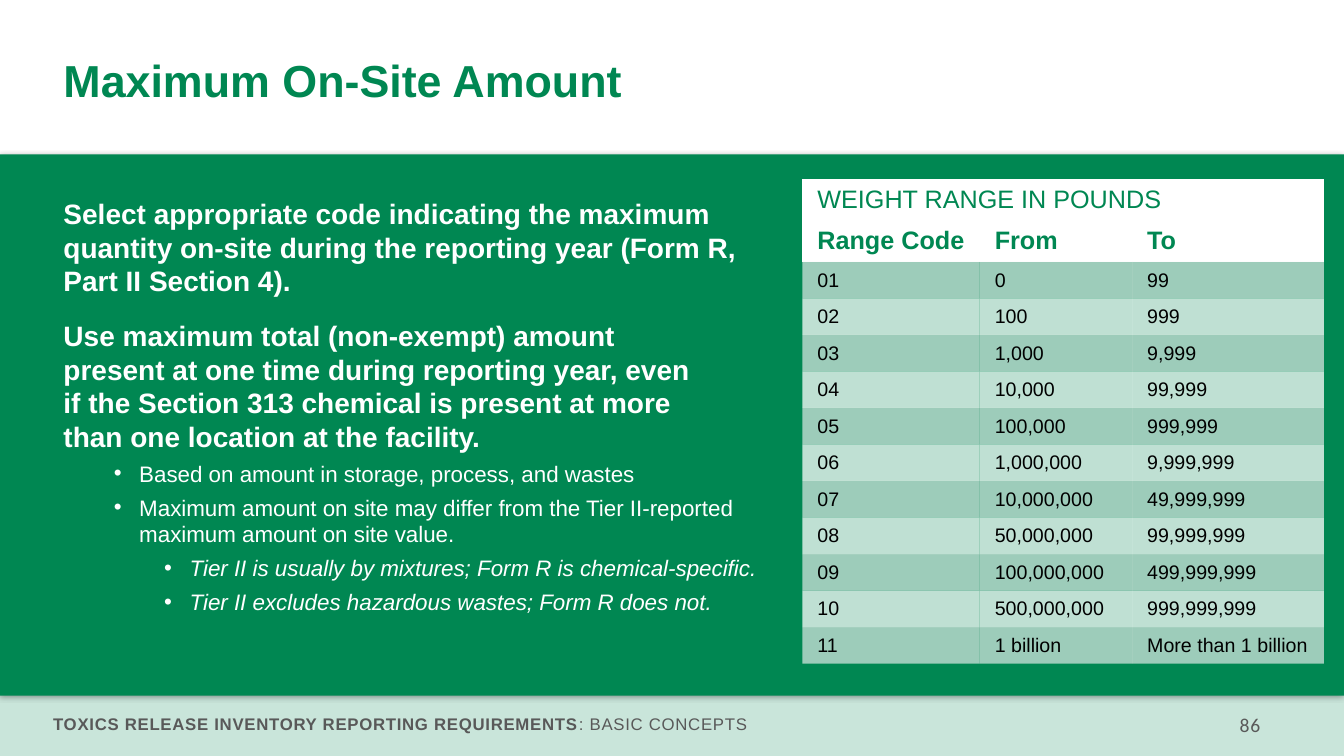
import pptx
import pptx.util
import pptx.dml.color
import pptx.enum.shapes
import pptx.enum.text
import pptx.oxml
import pptx.oxml.ns

Cm, Pt = pptx.util.Cm, pptx.util.Pt
ALIGN = pptx.enum.text.PP_ALIGN
ANCHOR = pptx.enum.text.MSO_ANCHOR
NS = pptx.oxml.ns.nsdecls("a")
COLORS = {"green": "008752", "white": "FFFFFF", "pale": "F2F2F2",
          "gray": "595959", "black": "000000"}
NO_STYLE = "{2D5ABB26-0587-4C30-8999-92F81FD0307C}"


class Deck:
    """Slide style and the current slide."""

    font = "Arial"

    def __init__(self):
        self.prs = pptx.Presentation()
        self.prs.slide_width, self.prs.slide_height = Cm(33.87), Cm(19.05)
        self.slide = self.prs.slides.add_slide(self.prs.slide_layouts[6])

    def paint(self, fill, color, alpha=100):
        fill.solid()
        fill.fore_color.rgb = pptx.dml.color.RGBColor.from_string(COLORS[color])
        if alpha < 100:
            tint = fill._xPr.find(".//" + pptx.oxml.ns.qn("a:srgbClr"))
            tint.append(pptx.oxml.parse_xml(f'<a:alpha {NS} val="{alpha * 1000}"/>'))

    def band(self, top, height, color, alpha=100, shadow=False):
        shape = self.slide.shapes.add_shape(
            pptx.enum.shapes.MSO_SHAPE.RECTANGLE, 0, Cm(top),
            self.prs.slide_width, Cm(height))
        shape.shadow.inherit = False
        shape.line.fill.background()
        self.paint(shape.fill, color, alpha)
        if shadow:
            effect = shape._element.spPr.find(pptx.oxml.ns.qn("a:effectLst"))
            effect.append(pptx.oxml.parse_xml(
                f'<a:outerShdw {NS} blurRad="{Pt(4)}" dist="{Pt(1)}" dir="5400000" '
                'rotWithShape="0"><a:srgbClr val="000000">'
                '<a:alpha val="34000"/></a:srgbClr></a:outerShdw>'))

    def box(self, left, top, width, height, anchor=ANCHOR.TOP):
        frame = self.slide.shapes.add_textbox(
            Cm(left), Cm(top), Cm(width), Cm(height)).text_frame
        frame.word_wrap = True
        frame.vertical_anchor = anchor
        return frame

    def run(self, para, text, size, color, bold=False, italic=False,
            font=None, gap=0):
        run = para.add_run()
        run.text = text
        face = run.font
        face.name, face.size = font or self.font, Pt(size)
        face.bold, face.italic = bold, italic
        self.paint(face.fill, color)
        if gap:
            run._r.get_or_add_rPr().set("spc", str(int(gap * 100)))

    def bullet(self, para, level):
        para.level = level
        props = para._p.get_or_add_pPr()
        props.set("marL", str(Cm(0.64 + 1.27 * level)))
        props.set("indent", str(Cm(-0.64)))
        props.append(pptx.oxml.parse_xml(f'<a:buFont {NS} typeface="Arial"/>'))
        props.append(pptx.oxml.parse_xml(f'<a:buChar {NS} char="•"/>'))

    def cell(self, cell, text, size, color, fill, alpha, bold):
        cell.margin_left = cell.margin_right = Cm(0.38)
        cell.margin_top = cell.margin_bottom = Cm(0.1)
        cell.vertical_anchor = ANCHOR.MIDDLE
        self.paint(cell.fill, fill, alpha)
        if text:
            self.run(cell.text_frame.paragraphs[0], text, size, color, bold)

    def table(self, left, top, widths, heights, rows):
        frame = self.slide.shapes.add_table(
            len(rows), len(widths), Cm(left), Cm(top),
            Cm(sum(widths)), Cm(sum(heights)))
        grid = frame.table
        grid._tbl.tblPr[0].text = NO_STYLE
        grid.horz_banding = False
        for col, width in zip(grid.columns, widths):
            col.width = Cm(width)
        for row, height in zip(grid.rows, heights):
            row.height = Cm(height)
        for i, row in enumerate(rows):
            if i < 2:
                look = (18, "green", "white", 100, i == 1)
            elif i % 2:
                look = (14, "black", "white", 75, False)
            else:
                look = (14, "black", "pale", 65, False)
            for j, text in enumerate(row):
                self.cell(grid.cell(i, j), text, *look)
        grid.cell(0, 0).merge(grid.cell(0, len(widths) - 1))


LEADS = [
    ["Select appropriate code indicating the maximum quantity on-site during "
     "the reporting year (Form R, Part II Section 4)."],
    ["Use maximum total (non-exempt) amount ",
     "present at one time during reporting year, even ",
     "if the Section 313 chemical is present at more ",
     "than one location at the facility."],
]
POINTS = [
    (1, "Based on amount in storage, process, and wastes"),
    (1, "Maximum amount on site may differ from the Tier II-reported "
        "maximum amount on site value."),
    (2, "Tier II is usually by mixtures; Form R is chemical-specific."),
    (2, "Tier II excludes hazardous wastes; Form R does not."),
]
RANGES = [
    ("0", "99"), ("100", "999"), ("1,000", "9,999"), ("10,000", "99,999"),
    ("100,000", "999,999"), ("1,000,000", "9,999,999"),
    ("10,000,000", "49,999,999"), ("50,000,000", "99,999,999"),
    ("100,000,000", "499,999,999"), ("500,000,000", "999,999,999"),
    ("1 billion", "More than 1 billion"),
]


def main():
    deck = Deck()

    # Bands
    deck.band(17.07, 1.98, "green", alpha=21)
    deck.band(3.89, 13.64, "green", shadow=True)

    # Footer
    foot = deck.box(1.09, 17.86, 21.39, 0.76).paragraphs[0]
    deck.run(foot, "TOXICS RELEASE INVENTORY REPORTING REQUIREMENTS", 12,
             "gray", bold=True, gap=0.5)
    deck.run(foot, ": BASIC CONCEPTS", 12, "gray", gap=0.5)
    page = deck.box(28.63, 17.83, 3.38, 0.86).paragraphs[0]
    page.alignment = ALIGN.RIGHT
    deck.run(page, "86", 14, "gray", font="Calibri", gap=0.5)

    # Title
    title = deck.box(1.35, 1.07, 30.66, 2.06, ANCHOR.MIDDLE).paragraphs[0]
    title.line_spacing = 0.9
    deck.run(title, "Maximum On-Site Amount", 32, "green", bold=True)

    # Body text
    body = deck.box(1.35, 4.83, 18.19, 11.1)
    for i, lines in enumerate(LEADS):
        para = body.add_paragraph() if i else body.paragraphs[0]
        if i:
            para.space_before = Pt(15)
        for j, line in enumerate(lines):
            if j:
                para.add_line_break()
            deck.run(para, line, 20, "white", bold=True)
    for level, text in POINTS:
        para = body.add_paragraph()
        para.space_before = Pt(5)
        deck.bullet(para, level)
        deck.run(para, text, 16, "white", italic=level == 2)

    # Range table
    rows = [("WEIGHT RANGE IN POUNDS", "", ""), ("Range Code", "From", "To")]
    rows += [(f"{n:02}", *pair) for n, pair in enumerate(RANGES, 1)]
    deck.table(20.22, 4.52, [4.47, 3.84, 4.83],
               [1.02, 1.06] + [0.92] * len(RANGES), rows)

    deck.prs.save("out.pptx")


if __name__ == "__main__":
    main()
